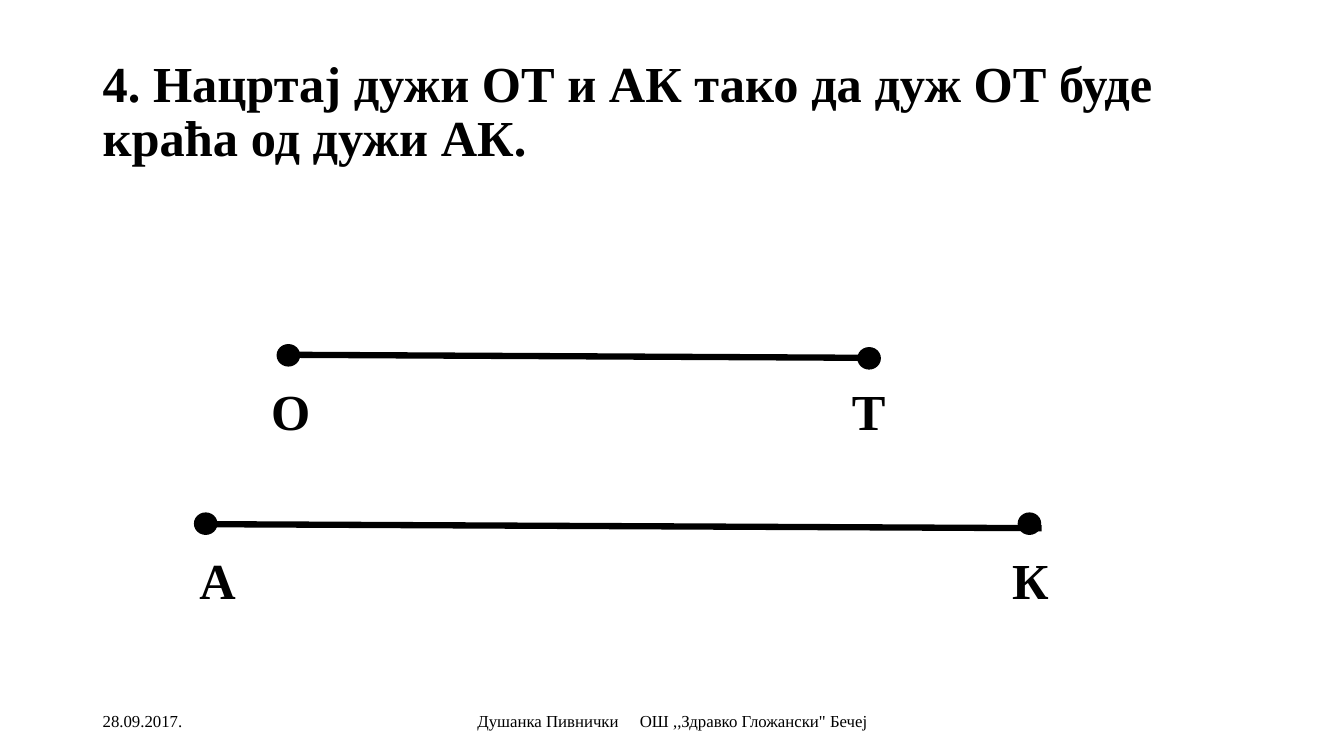
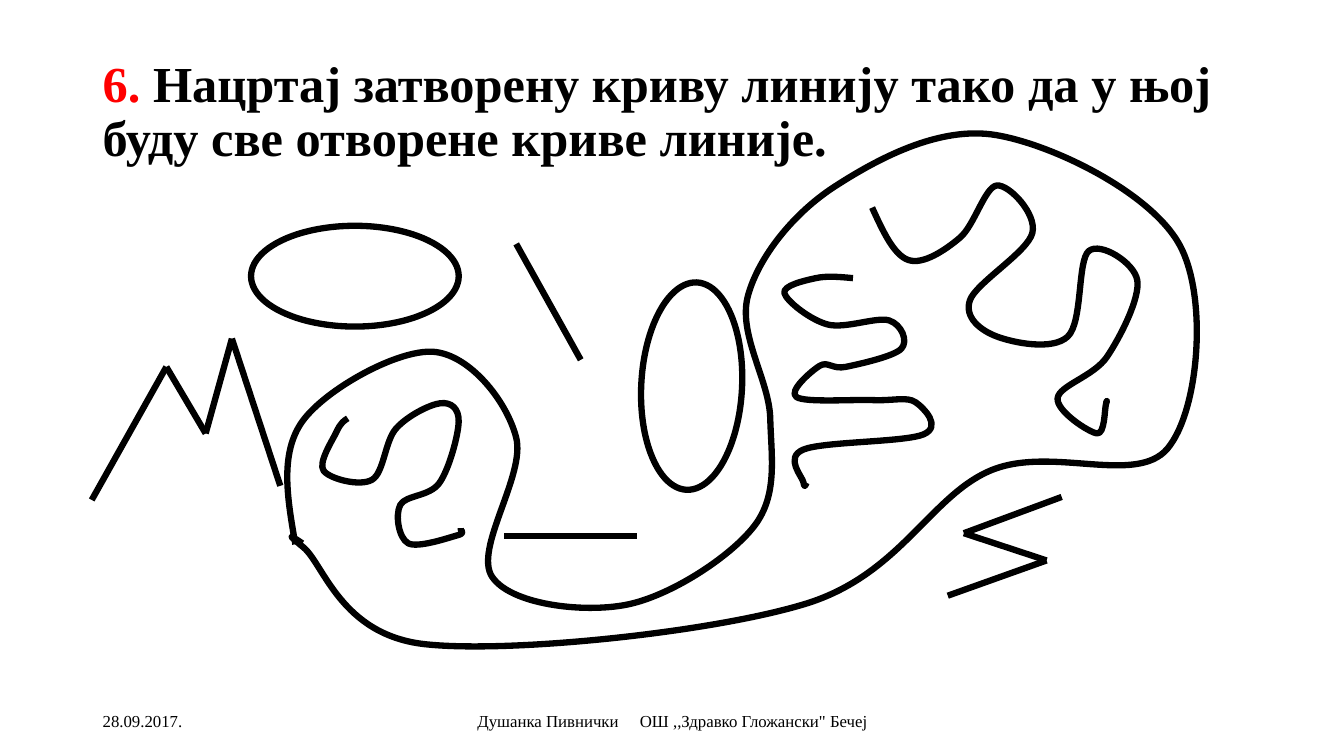
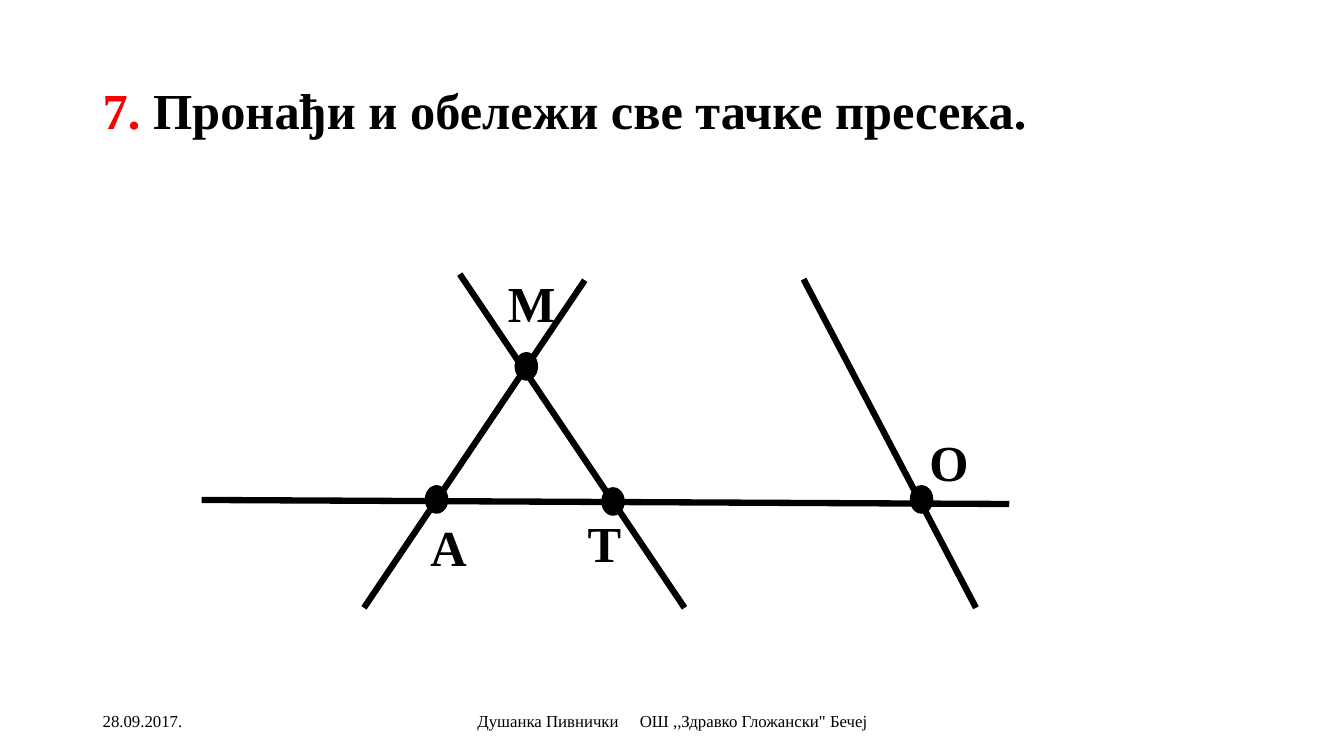
from dataclasses import dataclass
from itertools import pairwise

from lxml import etree
from pptx import Presentation
from pptx import presentation as pres
from pptx import slide as sld
from pptx.dml import color
from pptx.enum import shapes, text
from pptx.oxml import ns
from pptx.util import Emu, Pt

EMU_PER_PX = 9144
DATE = "28.09.2017."
AUTHOR = "Душанка Пивнички"
SCHOOL = "ОШ ,,Здравко Гложански\" Бечеј"

Point = tuple[float, float]


@dataclass(frozen=True)
class Theme:
    ink: str = "000000"
    accent: str = "FF0000"
    paper: str = "FFFFFF"
    font: str = "Times New Roman"
    heading: int = 36
    footer: int = 12
    stroke: float = 4.5
    dot_stroke: float = 1
    line_spacing: float = 0.9


THEME = Theme()


@dataclass(frozen=True)
class Box:
    left: int
    top: int
    width: int
    height: int


@dataclass(frozen=True)
class Span:
    text: str
    color: str = THEME.ink
    tracking: int = 0


@dataclass(frozen=True)
class Label:
    letter: str
    left: int
    top: int
    width: int = 56


TITLE_BOX = Box(92, 40, 1150, 145)
DATE_BOX = Box(92, 695, 300, 40)
AUTHOR_BOX = Box(442, 695, 450, 40)


def px(value: float) -> Emu:
    return Emu(round(value * EMU_PER_PX))


def frame(box: Box) -> tuple[Emu, Emu, Emu, Emu]:
    return px(box.left), px(box.top), px(box.width), px(box.height)


def rgb(value: str) -> color.RGBColor:
    return color.RGBColor.from_string(value)


def add_text(page: sld.Slide, box: Box, *spans: Span, size: int = THEME.heading,
             bold: bool = True, line_spacing: float = THEME.line_spacing,
             align: text.PP_ALIGN = text.PP_ALIGN.LEFT) -> None:
    body = page.shapes.add_textbox(*frame(box)).text_frame
    body.word_wrap = True
    body.vertical_anchor = text.MSO_ANCHOR.MIDDLE
    para = body.paragraphs[0]
    para.alignment = align
    para.line_spacing = line_spacing
    for span in spans:
        run = para.add_run()
        run.text = span.text
        run.font.name = THEME.font
        run.font.size = Pt(size)
        run.font.bold = bold
        run.font.color.rgb = rgb(span.color)
        if span.tracking:
            run.font._element.set("spc", str(span.tracking * 100))


def add_page(deck: pres.Presentation, *title: Span) -> sld.Slide:
    page = deck.slides.add_slide(deck.slide_layouts[6])
    add_text(page, TITLE_BOX, *title)
    add_text(page, DATE_BOX, Span(DATE), size=THEME.footer, bold=False, line_spacing=1)
    add_text(page, AUTHOR_BOX, Span(AUTHOR), Span(" ", tracking=12), Span(SCHOOL),
             size=THEME.footer, bold=False, line_spacing=1, align=text.PP_ALIGN.CENTER)
    return page


def add_polyline(page: sld.Slide, *corners: Point) -> None:
    for start, end in pairwise(corners):
        line = page.shapes.add_connector(
            shapes.MSO_CONNECTOR.STRAIGHT, *(px(value) for value in start + end))
        line.line.color.rgb = rgb(THEME.ink)
        line.line.width = Pt(THEME.stroke)
        etree.SubElement(line._element.spPr, ns.qn("a:effectLst"))


def add_ellipse(page: sld.Slide, box: Box, fill: str, stroke: float,
                rotation: float = 0) -> None:
    ellipse = page.shapes.add_shape(shapes.MSO_SHAPE.OVAL, *frame(box))
    ellipse.shadow.inherit = False
    ellipse.rotation = rotation
    ellipse.fill.solid()
    ellipse.fill.fore_color.rgb = rgb(fill)
    ellipse.line.color.rgb = rgb(THEME.ink)
    ellipse.line.width = Pt(stroke)


def add_dots(page: sld.Slide, height: int, *corners: tuple[int, int]) -> None:
    for left, top in corners:
        add_ellipse(page, Box(left, top, 22, height), THEME.ink, THEME.dot_stroke)


def add_labels(page: sld.Slide, *labels: Label) -> None:
    for label in labels:
        add_text(page, Box(label.left, label.top, label.width, 90), Span(label.letter))


def midpoint(first: Point, second: Point) -> Point:
    return (first[0] + second[0]) / 2, (first[1] + second[1]) / 2


def handle(knots: list[Point], index: int, sign: int) -> Point:
    before, knot, after = knots[index - 1:index + 2]
    return (knot[0] + sign * (after[0] - before[0]) / 6,
            knot[1] + sign * (after[1] - before[1]) / 6)


def bezier_arcs(knots: list[Point]) -> list[tuple[Point, Point, Point]]:
    arcs = []
    last = len(knots) - 2
    for index, (start, end) in enumerate(pairwise(knots)):
        if index == 0:
            arrive = handle(knots, 1, -1)
            leave = midpoint(start, arrive)
        else:
            leave = handle(knots, index, 1)
            arrive = midpoint(leave, end) if index == last else handle(knots, index + 1, -1)
        arcs.append((leave, arrive, end))
    return arcs


def add_curve(page: sld.Slide, knots: list[Point]) -> None:
    start, *rest = [(px(x), px(y)) for x, y in knots]
    builder = page.shapes.build_freeform(*start, scale=1.0)
    builder.add_line_segments(rest, close=False)
    curve = builder.convert_to_shape()
    straight_parts = list(curve._element.iter(ns.qn("a:lnTo")))
    for straight, arc in zip(straight_parts, bezier_arcs(knots)):
        cubic = etree.Element(ns.qn("a:cubicBezTo"))
        for x, y in arc:
            etree.SubElement(cubic, ns.qn("a:pt"),
                             x=str(px(x) - curve.left), y=str(px(y) - curve.top))
        straight.getparent().replace(straight, cubic)
    curve.shadow.inherit = False
    curve.fill.background()
    curve.line.color.rgb = rgb(THEME.ink)
    curve.line.width = Pt(THEME.stroke)


def build_segments(deck: pres.Presentation) -> None:
    page = add_page(deck, Span("4. Нацртај дужи ОТ и АК тако да дуж ОТ буде краћа од дужи АК."))
    add_polyline(page, (287, 352), (863, 355))
    add_polyline(page, (204, 520), (1033, 524))
    add_dots(page, 21, (275, 342), (851, 345), (193, 509), (1010, 509))
    add_labels(page, Label("О", 259, 366), Label("Т", 835, 366),
               Label("А", 188, 534), Label("К", 994, 534))


def build_curves(deck: pres.Presentation) -> None:
    page = add_page(
        deck, Span("6. ", THEME.accent),
        Span("Нацртај затворену криву линију тако да у њој буду све отворене криве линије."))
    add_polyline(page, (91, 496), (165, 364), (204, 430), (230, 336), (278, 482))
    add_polyline(page, (512, 242), (576, 357))
    add_polyline(page, (500, 532), (632, 532))
    add_polyline(page, (1053, 493), (956, 529), (1038, 556), (940, 591))
    add_ellipse(page, Box(249, 224, 206, 100), THEME.paper, THEME.stroke)
    add_ellipse(page, Box(583, 333, 206, 100), THEME.paper, THEME.stroke, rotation=272.9)

    left_curve = [(345, 415), (334, 428), (321, 467), (369, 476), (393, 425), (437, 400),
                  (455, 418), (436, 479), (397, 501), (405, 539), (454, 531), (457, 525),
                  (457, 524)]
    middle_curve = [(846, 276), (809, 276), (778, 291), (821, 322), (882, 318), (894, 346),
                    (839, 364), (813, 363), (790, 394), (866, 397), (908, 399), (916, 431),
                    (797, 446), (797, 479), (800, 479)]
    right_curve = [(865, 206), (901, 258), (952, 236), (989, 184), (1024, 231), (962, 298),
                   (989, 334), (1059, 334), (1080, 249), (1128, 278), (1098, 354),
                   (1049, 395), (1088, 430), (1097, 401), (1097, 400)]
    enclosing_curve = [(293, 540), (300, 418), (430, 349), (512, 434), (488, 572), (621, 600),
                       (748, 522), (764, 415), (742, 293), (828, 185), (988, 134), (1170, 243),
                       (1158, 445), (982, 467), (799, 599), (421, 639), (301, 543), (300, 539)]
    for knots in (left_curve, middle_curve, right_curve, enclosing_curve):
        add_curve(page, knots)


def build_intersections(deck: pres.Presentation) -> None:
    page = add_page(deck, Span("7. ", THEME.accent),
                    Span("Пронађи и обележи све тачке пресека."))
    add_polyline(page, (200, 496), (1001, 500))
    add_polyline(page, (361, 603), (580, 278))
    add_polyline(page, (679, 603), (456, 272))
    add_polyline(page, (968, 603), (797, 277))
    add_dots(page, 27, (422, 482), (511, 350), (597, 484), (903, 482))
    add_labels(page, Label("А", 417, 501), Label("М", 494, 259, 67),
               Label("Т", 573, 497), Label("О", 912, 417))


def main() -> None:
    deck = Presentation()
    deck.slide_width, deck.slide_height = px(1333), px(750)
    build_segments(deck)
    build_curves(deck)
    build_intersections(deck)
    deck.save("out.pptx")


if __name__ == "__main__":
    main()
